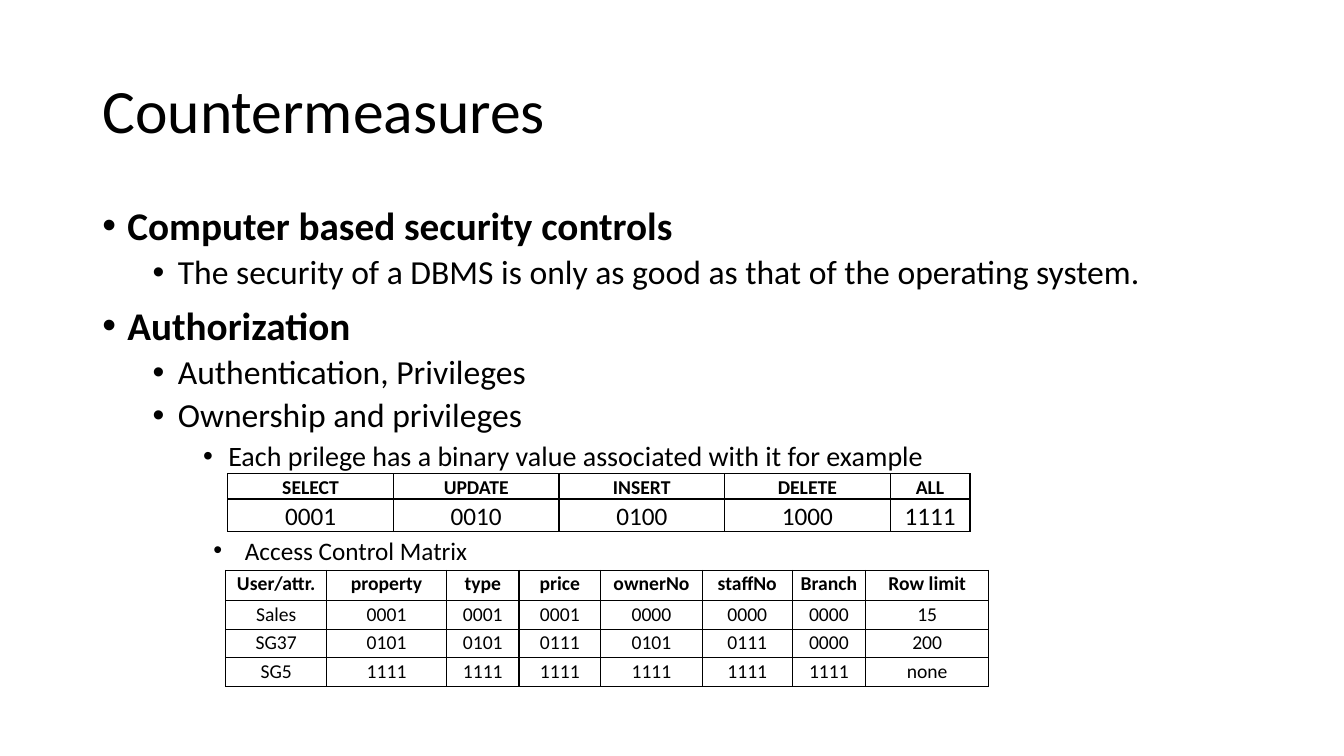
from lxml import etree
from pptx import Presentation
from pptx import util as u
from pptx.dml.color import RGBColor
from pptx.enum import text
from pptx.oxml import ns

BLACK = RGBColor(0x00, 0x00, 0x00)
FONT = "Calibri"
TITLE_ONLY = 5

OUTLINE = [
    (0, "Computer based security controls"),
    (1, "The security of a DBMS is only as good as that of the operating system."),
    (0, "Authorization"),
    (1, "Authentication, Privileges"),
    (1, "Ownership and privileges"),
    (2, "Each prilege has a binary value associated with it for example"),
]
LEVEL_SIZES = [28, 24, 20]

PRIVILEGES = [
    ["SELECT", "UPDATE", "INSERT", "DELETE", "ALL"],
    ["0001", "0010", "0100", "1000", "1111"],
]
ACCESS_MATRIX = [
    ["User/attr.", "property", "type", "price", "ownerNo", "staffNo", "Branch", "Row limit"],
    ["Sales", "0001", "0001", "0001", "0000", "0000", "0000", "15"],
    ["SG37", "0101", "0101", "0111", "0101", "0111", "0000", "200"],
    ["SG5", "1111", "1111", "1111", "1111", "1111", "1111", "none"],
]


def add_span(para, wording, size, bold=False):
    span = para.add_run()
    span.text = wording
    span.font.name = FONT
    span.font.size = u.Pt(size)
    span.font.bold = bold
    span.font.color.rgb = BLACK


def set_bullet(para, margin, hanging):
    properties = para._p.get_or_add_pPr()
    properties.set("marL", str(u.Pt(margin)))
    properties.set("indent", str(-u.Pt(hanging)))
    font = etree.SubElement(properties, ns.qn("a:buFont"))
    font.set("typeface", "Arial")
    bullet = etree.SubElement(properties, ns.qn("a:buChar"))
    bullet.set("char", "•")


def format_title(page, wording):
    title = page.shapes.title
    title.left, title.top = u.Pt(66), u.Pt(28.8)
    title.width, title.height = u.Pt(828), u.Pt(104.4)
    frame = title.text_frame
    frame.auto_size = text.MSO_AUTO_SIZE.NONE
    frame.vertical_anchor = text.MSO_ANCHOR.MIDDLE
    para = frame.paragraphs[0]
    para.alignment = text.PP_ALIGN.LEFT
    para.line_spacing = 0.9
    add_span(para, wording, 44)


def add_text_box(page, left, top, width, height):
    box = page.shapes.add_textbox(u.Pt(left), u.Pt(top), u.Pt(width), u.Pt(height))
    box.text_frame.word_wrap = True
    return box.text_frame


def add_outline(page):
    frame = add_text_box(page, 66, 144, 828, 342.7)
    for index, (level, wording) in enumerate(OUTLINE):
        para = frame.add_paragraph() if index else frame.paragraphs[0]
        para.level = level
        para.line_spacing = 0.9
        para.space_before = u.Pt(5 if level else 10)
        set_bullet(para, 18 + 36 * level, 18)
        add_span(para, wording, LEVEL_SIZES[level], bold=level == 0)


def add_matrix_label(page):
    frame = add_text_box(page, 145.4, 378.7, 463.7, 28.8)
    para = frame.paragraphs[0]
    set_bullet(para, 22.5, 22.5)
    add_span(para, "Access Control Matrix", 18)


def set_borders(cell):
    properties = cell._tc.get_or_add_tcPr()
    for position, side in enumerate(("lnL", "lnR", "lnT", "lnB")):
        line = etree.Element(ns.qn(f"a:{side}"), w=str(u.Pt(1)))
        fill = etree.SubElement(line, ns.qn("a:solidFill"))
        etree.SubElement(fill, ns.qn("a:srgbClr"), val=str(BLACK))
        properties.insert(position, line)


def fill_cell(cell, wording, size, bold):
    cell.margin_left = cell.margin_right = u.Pt(5)
    cell.margin_top = cell.margin_bottom = u.Pt(0)
    cell.fill.background()
    set_borders(cell)
    para = cell.text_frame.paragraphs[0]
    para.alignment = text.PP_ALIGN.CENTER
    para.line_spacing = 1.07
    add_span(para, wording, size, bold)


def add_grid(page, left, top, widths, heights, rows, value_size):
    frame = page.shapes.add_table(
        len(rows), len(widths), u.Pt(left), u.Pt(top),
        u.Pt(sum(widths)), u.Pt(sum(heights)),
    )
    table = frame.table
    table.first_row = table.horz_banding = False
    for column, width in zip(table.columns, widths):
        column.width = u.Pt(width)
    for index, (row, height) in enumerate(zip(table.rows, heights)):
        row.height = u.Pt(height)
        header = index == 0
        for cell, wording in zip(row.cells, rows[index]):
            fill_cell(cell, wording, 14 if header else value_size, header)


def main():
    deck = Presentation()
    deck.slide_width, deck.slide_height = u.Pt(960), u.Pt(540)
    page = deck.slides.add_slide(deck.slide_layouts[TITLE_ONLY])
    format_title(page, "Countermeasures")
    add_outline(page)
    add_grid(page, 162.7, 338.4, [118.3] * 4 + [57], [16.6, 20.2], PRIVILEGES, 18)
    matrix_widths = [72, 85.7, 51.8, 58.3, 72.7, 64.1, 52.6, 87.8]
    add_grid(page, 161.3, 407.5, matrix_widths, [21.6] + [20.4] * 3, ACCESS_MATRIX, 14)
    add_matrix_label(page)
    deck.save("out.pptx")


if __name__ == "__main__":
    main()
